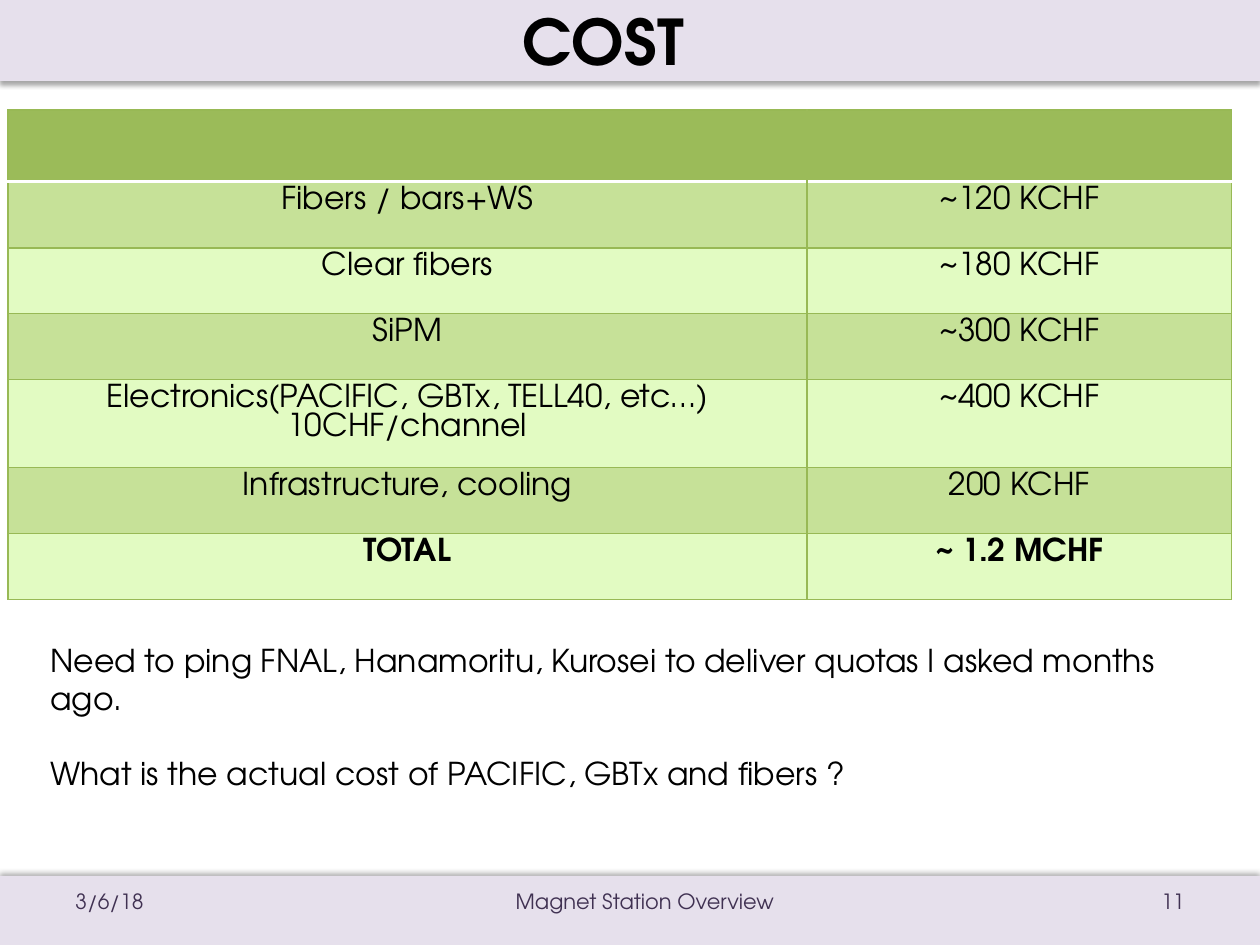
from lxml.etree import SubElement
from pptx import Presentation
from pptx.dml.color import RGBColor
from pptx.enum.shapes import MSO_SHAPE
from pptx.enum.text import MSO_ANCHOR, PP_ALIGN
from pptx.oxml.ns import qn
from pptx.util import Emu, Pt

FONT = "TeX Gyre Adventor"
SCALE = 914400 / 126
COLORS = {
    "band": "E6E0EC", "foot": "403152", "text": "000000", "white": "FFFFFF",
    "head": "9BBB59", "dark": "C6E198", "light": "E2FBC2", "edge": "98B955",
}


def px(*sizes):
    """Turn px lengths into EMU."""
    return [Emu(round(size * SCALE)) for size in sizes]


def style(para, size, color="text", bold=False, align=PP_ALIGN.LEFT):
    para.alignment = align
    for run in para.runs:
        run.font.name = FONT
        run.font.size = Pt(size)
        run.font.bold = bold
        run.font.color.rgb = RGBColor.from_string(COLORS[color])


deck = Presentation()
deck.slide_width, deck.slide_height = px(1260, 945)
slide = deck.slides.add_slide(deck.slide_layouts[6])
shapes = slide.shapes

# Top and bottom bands, each with a soft shadow towards the middle
for top, height, angle in [(0, 81, 90), (876, 69, 256)]:
    band = shapes.add_shape(MSO_SHAPE.RECTANGLE, *px(0, top, 1260, height))
    band.shadow.inherit = False
    band.fill.solid()
    band.fill.fore_color.rgb = RGBColor.from_string(COLORS["band"])
    band.line.fill.background()
    effects = band._element.spPr.find(qn("a:effectLst"))
    shadow = SubElement(effects, qn("a:outerShdw"), blurRad=str(Pt(3.1)),
                        dist=str(Pt(1.8)), dir=str(angle * 60000),
                        rotWithShape="0")
    tint = SubElement(shadow, qn("a:srgbClr"), val=COLORS["text"])
    SubElement(tint, qn("a:alpha"), val="35000")

# Footer
for left, width, text, align in [
    (63, 294, "3/6/18", PP_ALIGN.LEFT),
    (260, 770, "Magnet Station Overview", PP_ALIGN.CENTER),
    (903, 294, "11", PP_ALIGN.RIGHT),
]:
    frame = shapes.add_textbox(*px(left, 876, width, 50)).text_frame
    frame.word_wrap = True
    frame.vertical_anchor = MSO_ANCHOR.MIDDLE
    frame.text = text
    style(frame.paragraphs[0], 12, "foot", align=align)

# Title
frame = shapes.add_textbox(*px(510, -4, 188, 89)).text_frame
frame.word_wrap = False
frame.text = "COST"
style(frame.paragraphs[0], 36, bold=True)

# Cost table
costs = [
    ("", ""),
    ("Fibers / bars+WS", "~120 KCHF"),
    ("Clear fibers", "~180 KCHF"),
    ("SiPM", "~300 KCHF"),
    ("Electronics(PACIFIC, GBTx, TELL40, etc…) 10CHF/channel", "~400 KCHF"),
    ("Infrastructure, cooling", "200 KCHF"),
    ("TOTAL", "~ 1.2 MCHF"),
]
heights = [72, 66, 66, 66, 88, 66, 66]
table = shapes.add_table(len(costs), 2,
                         *px(8, 110, 1224, sum(heights))).table
for col, width in zip(table.columns, px(799, 425)):
    col.width = width
for row, height in zip(table.rows, px(*heights)):
    row.height = height

for i, texts in enumerate(costs):
    fill = "head" if i == 0 else "dark" if i % 2 else "light"
    for j, text in enumerate(texts):
        cell = table.cell(i, j)
        cell.margin_top, cell.margin_bottom = px(5, 5)
        edges = {side: ("edge", 0.75) for side in "LRTB"}
        if i == 0:
            edges["B"] = ("white", 2)
            edges["L" if j else "R"] = ("head", 0.75)
        elif i == 1:
            edges["T"] = ("white", 2)
        props = cell._tc.get_or_add_tcPr()
        for side, (color, points) in edges.items():
            line = SubElement(props, qn(f"a:ln{side}"), w=str(Pt(points)))
            solid = SubElement(line, qn("a:solidFill"))
            SubElement(solid, qn("a:srgbClr"), val=COLORS[color])
        cell.fill.solid()
        cell.fill.fore_color.rgb = RGBColor.from_string(COLORS[fill])
        if text:
            cell.text_frame.text = text
            para = cell.text_frame.paragraphs[0]
            para.line_spacing = 0.97
            style(para, 18, bold=i == len(costs) - 1, align=PP_ALIGN.CENTER)

# Open questions
frame = shapes.add_textbox(*px(38, 635, 1172, 165)).text_frame
frame.word_wrap = True
frame.text = ("Need to ping FNAL, Hanamoritu, Kurosei to deliver quotas "
              "I asked months ago.\n"
              "What is the actual cost of PACIFIC, GBTx and fibers ?")
for para in frame.paragraphs:
    style(para, 18)
frame.paragraphs[1].space_before = Pt(21.5)

deck.save("out.pptx")
